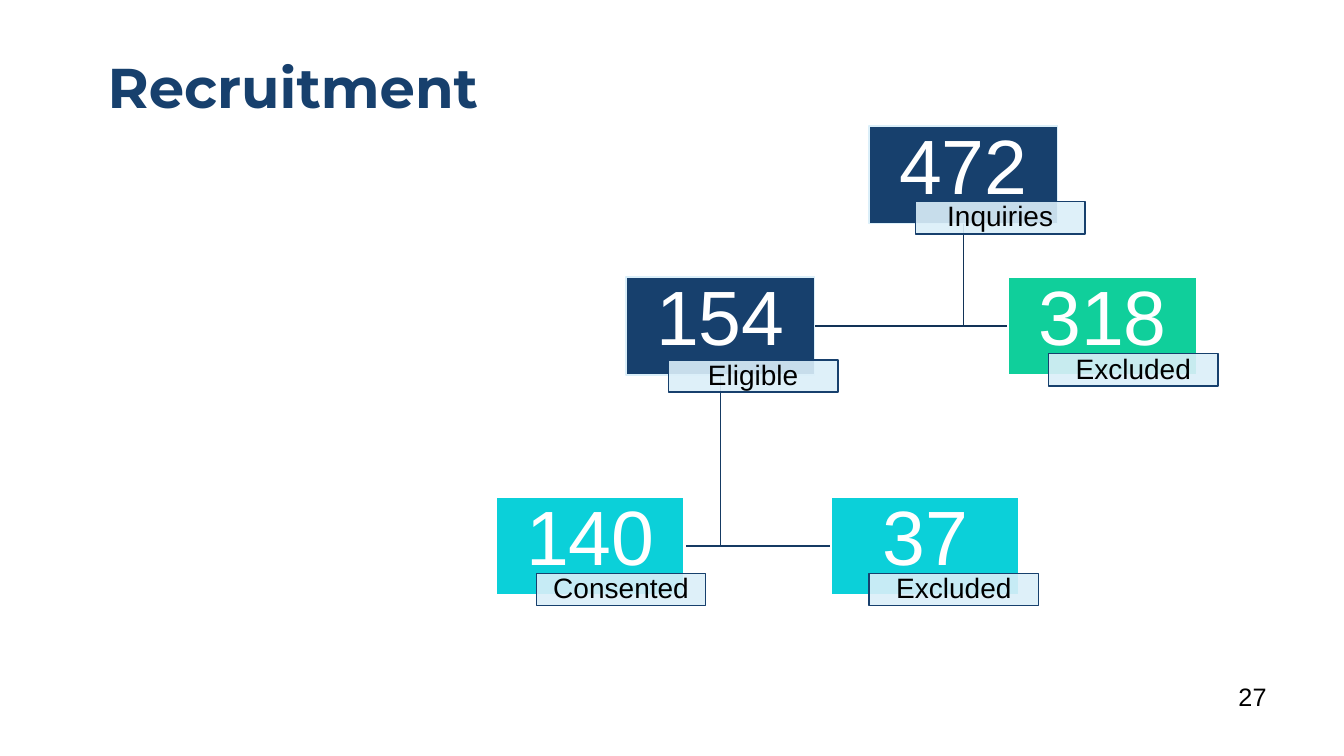
from dataclasses import dataclass

from lxml.etree import SubElement
from pptx import Presentation
from pptx.dml.color import RGBColor
from pptx.enum.shapes import MSO_SHAPE
from pptx.enum.text import MSO_ANCHOR, PP_ALIGN
from pptx.oxml.ns import qn
from pptx.util import Inches, Pt


@dataclass(frozen=True)
class Theme:
    navy: str = "17406D"
    green: str = "10CF9B"
    cyan: str = "0BD0D9"
    pale: str = "DBEFF9"
    white: str = "FFFFFF"
    black: str = "000000"
    upper_branch: str = "123357"
    lower_branch: str = "153A63"
    title_font: str = "Montserrat"
    body_font: str = "Arial"
    title_size: int = 40
    count_size: int = 55
    label_size: int = 20
    page_size: int = 18


THEME = Theme()
COUNT_WIDTH, COUNT_HEIGHT = 1.87, 0.97
LABEL_WIDTH, LABEL_HEIGHT = 1.68, 0.32
COUNT_INSETS = (0.04, 0.04, 0.04, 0.14)
LABEL_INSETS = (0.06, 0.01, 0.06, 0.01)
DEFAULT_INSETS = (0.1, 0.05, 0.1, 0.05)


@dataclass(frozen=True)
class Stage:
    """One recruitment step; label_left and label_top are offsets from the count box."""
    count: str
    label: str
    left: float
    top: float
    fill: str
    outline: str
    outline_width: float
    label_left: float
    label_top: float = 0.76

    @property
    def centre(self):
        return self.left + COUNT_WIDTH / 2

    @property
    def middle(self):
        return self.top + COUNT_HEIGHT / 2


INQUIRIES = Stage("472", "Inquiries", 8.62, 1.25, THEME.navy, THEME.pale, 1, 0.46, 0.75)
ELIGIBLE = Stage("154", "Eligible", 6.21, 2.75, THEME.navy, THEME.pale, 1, 0.42, 0.82)
NOT_ELIGIBLE = Stage("318", "Excluded", 10, 2.75, THEME.green, THEME.white, 1.5, 0.4)
CONSENTED = Stage("140", "Consented", 4.92, 4.93, THEME.cyan, THEME.white, 1.5, 0.4)
NOT_CONSENTED = Stage("37", "Excluded", 8.24, 4.93, THEME.cyan, THEME.white, 1.5, 0.38)

STAGES = (INQUIRIES, ELIGIBLE, CONSENTED, NOT_CONSENTED, NOT_ELIGIBLE)
BRANCHES = (
    (INQUIRIES, NOT_ELIGIBLE, THEME.upper_branch),
    (ELIGIBLE, NOT_CONSENTED, THEME.lower_branch),
    (ELIGIBLE, CONSENTED, THEME.lower_branch),
    (INQUIRIES, ELIGIBLE, THEME.upper_branch),
)


def write_text(box, text, size, color, align=PP_ALIGN.CENTER, anchor=MSO_ANCHOR.MIDDLE,
               insets=DEFAULT_INSETS, font=THEME.body_font, bold=False, spacing=0.9):
    frame = box.text_frame
    left, top, right, bottom = map(Inches, insets)
    frame_format = {"word_wrap": True, "vertical_anchor": anchor, "margin_left": left,
                    "margin_top": top, "margin_right": right, "margin_bottom": bottom}
    for name, value in frame_format.items():
        setattr(frame, name, value)
    para = frame.paragraphs[0]
    para.alignment = align
    para.line_spacing = spacing
    span = para.add_run()
    span.text = text
    for name, value in {"name": font, "size": Pt(size), "bold": bold}.items():
        setattr(span.font, name, value)
    span.font.color.rgb = RGBColor.from_string(color)


def set_line(shape, color, width):
    shape.shadow.inherit = False
    shape.line.color.rgb = RGBColor.from_string(color)
    shape.line.width = Pt(width)


def add_text(page, bounds, text, size, color, **text_format):
    box = page.shapes.add_textbox(*map(Inches, bounds))
    write_text(box, text, size, color, **text_format)


def add_box(page, bounds, fill, outline, outline_width, opacity=100):
    box = page.shapes.add_shape(MSO_SHAPE.RECTANGLE, *map(Inches, bounds))
    set_line(box, outline, outline_width)
    box.fill.solid()
    box.fill.fore_color.rgb = RGBColor.from_string(fill)
    if opacity < 100:
        color = box.fill._xPr.find(qn("a:solidFill"))[0]
        SubElement(color, qn("a:alpha"), val=str(opacity * 1000))
    return box


def add_branch(page, parent, child, color):
    """Drop from the parent's bottom centre, then turn to the child's near side."""
    near_side = child.left if child.left > parent.centre else child.left + COUNT_WIDTH
    start = Inches(parent.centre), Inches(parent.top + COUNT_HEIGHT)
    corner = Inches(parent.centre), Inches(child.middle)
    end = Inches(near_side), Inches(child.middle)
    builder = page.shapes.build_freeform(*start)
    builder.add_line_segments([corner, end], close=False)
    branch = builder.convert_to_shape()
    branch.fill.background()
    set_line(branch, color, 1)


def add_stage(page, stage):
    count = add_box(page, (stage.left, stage.top, COUNT_WIDTH, COUNT_HEIGHT),
                    stage.fill, stage.outline, stage.outline_width)
    write_text(count, stage.count, THEME.count_size, THEME.white, insets=COUNT_INSETS)
    label = add_box(page, (stage.left + stage.label_left, stage.top + stage.label_top,
                           LABEL_WIDTH, LABEL_HEIGHT), THEME.pale, THEME.navy, 1, opacity=90)
    write_text(label, stage.label, THEME.label_size, THEME.black, insets=LABEL_INSETS)


def main():
    deck = Presentation()
    deck.slide_width, deck.slide_height = Inches(13.33), Inches(7.5)
    page = deck.slides.add_slide(deck.slide_layouts[6])
    add_text(page, (0.03, 0.25, 5.75, 1), "Recruitment", THEME.title_size, THEME.navy,
             anchor=MSO_ANCHOR.BOTTOM, font=THEME.title_font, bold=True)
    for parent, child, color in BRANCHES:
        add_branch(page, parent, child, color)
    for stage in STAGES:
        add_stage(page, stage)
    add_text(page, (9.66, 6.71, 3, 0.4), "27", THEME.page_size, THEME.black,
             align=PP_ALIGN.RIGHT, spacing=1.0)
    deck.save("out.pptx")


if __name__ == "__main__":
    main()
